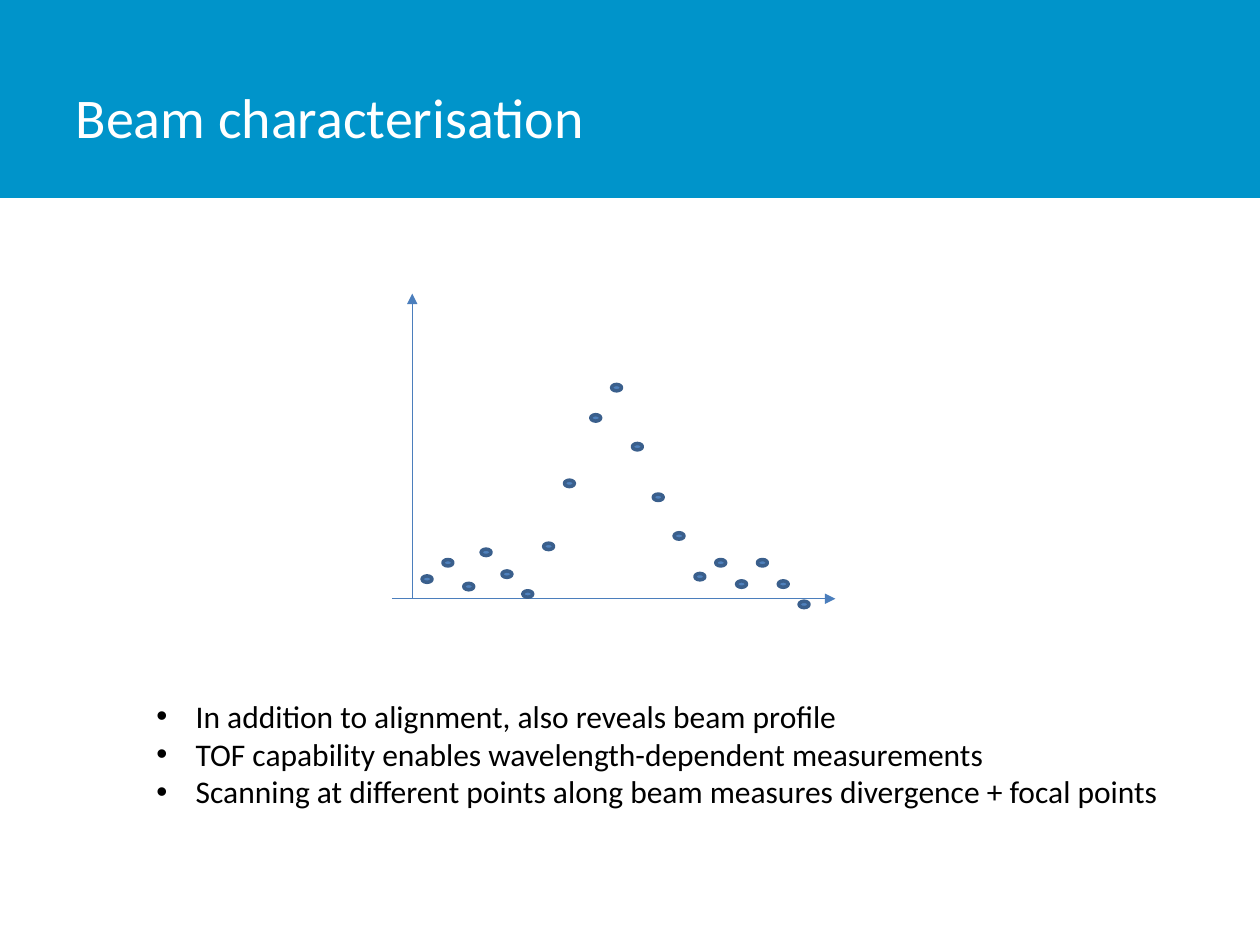
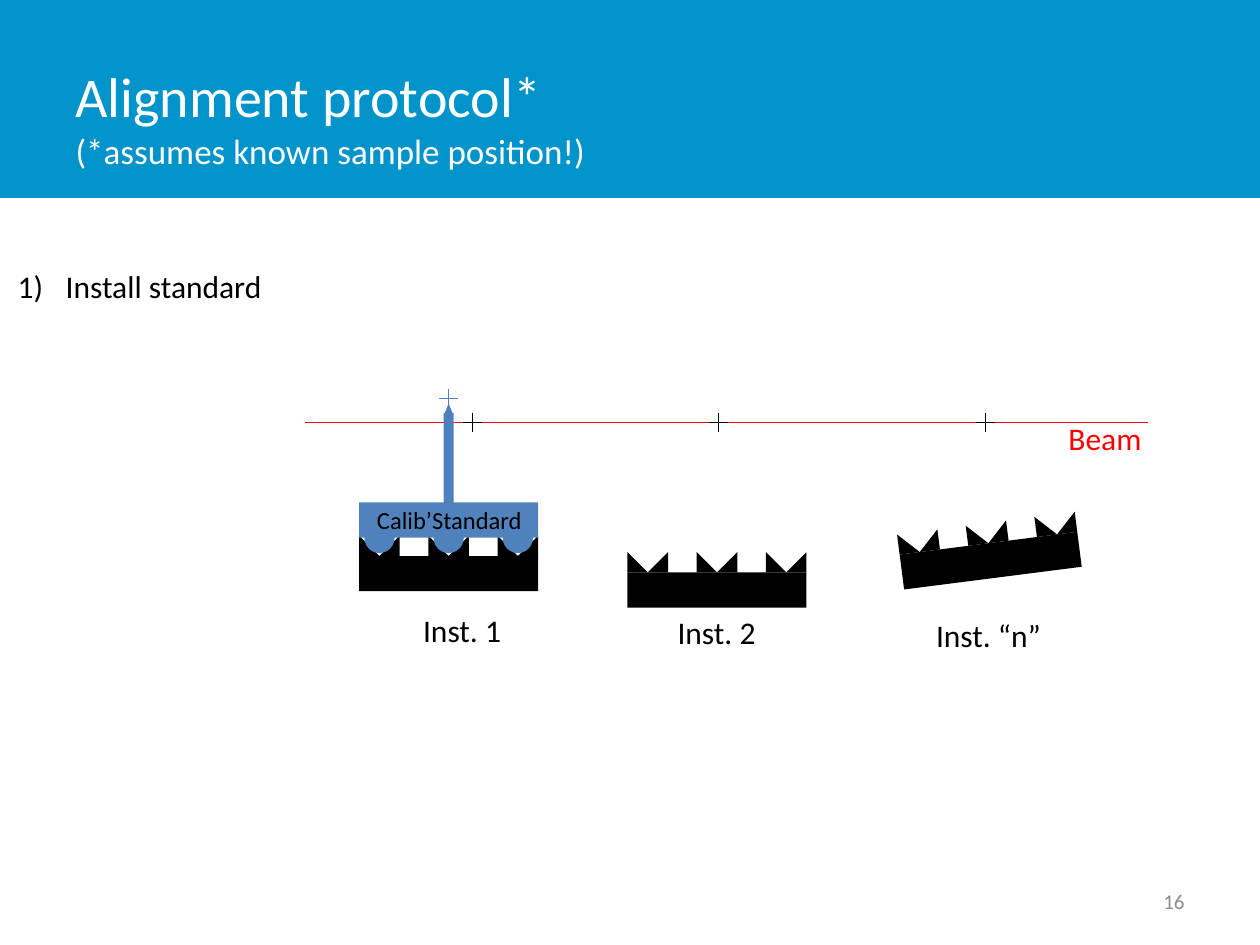
from lxml.etree import SubElement
from pptx import Presentation
from pptx.dml.color import RGBColor
from pptx.enum.shapes import MSO_CONNECTOR, MSO_SHAPE
from pptx.enum.text import MSO_ANCHOR, MSO_AUTO_SIZE, PP_ALIGN
from pptx.oxml.ns import qn
from pptx.util import Cm, Pt

FONT = "Calibri"
BAND, BLUE, STANDARD_BLUE = "0094CA", "4F81BD", "5182BB"
AXIS, DOT_EDGE = "4B7EBC", "3A5F8C"
BLACK, WHITE, RED, GREY = "000000", "FFFFFF", "FF0000", "8C8C8C"

PROFILE_TITLE = [("Beam characterisation", 32)]
PROFILE_POINTS = [
    "In addition to alignment, also reveals beam profile",
    "TOF capability enables wavelength-dependent measurements",
    "Scanning at different points along beam measures divergence + focal points",
]
AXES = [((8.31, 12.07), (8.31, 5.92)), ((7.9, 12.07), (16.84, 12.07))]
DOT_PITCH = 0.42
DOT_RUNS = [
    (8.51, [11.61, 11.28, 11.76]),
    (9.7, [11.07, 11.51, 11.91, 10.95, 9.68]),
    (11.91, [8.36, 7.75, 8.94, 9.96, 10.74, 11.56, 11.28, 11.71, 11.28, 11.71, 12.12]),
]

PROTOCOL_TITLE = [("Alignment protocol*", 32), ("(*assumes known sample position!)", 20)]
PROTOCOL_STEPS = ["Install standard"]
INSTRUMENTS = [(7.24, 10.8, 0), (12.65, 11.13, 0), (18.14, 10.54, -7.3)]
LABELS = [
    ("Inst. 1", (8.28, 12.19, 2.11, 1.02), BLACK),
    ("Inst. 2", (13.41, 12.24, 2.11, 1.02), BLACK),
    ("Inst. “n”", (18.62, 12.29, 2.64, 1.02), BLACK),
    ("Beam", (21.29, 8.33, 2.01, 1.02), RED),
]
BEAM_Y = 8.51
TARGETS = [9.52, 14.48, 19.86]
BAR_WIDTH, BAR_HEIGHT, TOOTH = 3.61, 0.71, 0.41
NOTCH_PITCH = (BAR_WIDTH - 2 * TOOTH) / 2
BALL = 0.61


def color(value):
    return RGBColor.from_string(value)


def box(*lengths):
    return [Cm(length) for length in lengths]


def place(shape, *lengths):
    shape.left, shape.top, shape.width, shape.height = box(*lengths)


def add_shape(shapes, kind, bounds, fill, edge=None):
    shape = shapes.add_shape(kind, *box(*bounds))
    shape.shadow.inherit = False
    shape.fill.solid()
    shape.fill.fore_color.rgb = color(fill)
    if edge:
        shape.line.color.rgb = color(edge)
        shape.line.width = Pt(2)
    else:
        shape.line.fill.background()
    return shape


def add_line(shapes, start, end, line_color, arrow=False):
    connector = shapes.add_connector(MSO_CONNECTOR.STRAIGHT, *box(*start, *end))
    connector.line.color.rgb = color(line_color)
    connector.line.width = Pt(0.75)
    if arrow:
        SubElement(connector.line._get_or_add_ln(), qn("a:tailEnd"), type="triangle")
    SubElement(connector._element.spPr, qn("a:effectLst"))


def format_runs(paragraph, size, text_color):
    for run in paragraph.runs:
        run.font.name = FONT
        run.font.size = Pt(size)
        run.font.color.rgb = color(text_color)


def add_text(shapes, text, bounds, size, text_color):
    text_box = shapes.add_textbox(*box(*bounds))
    frame = text_box.text_frame
    frame.word_wrap = False
    frame.text = text
    format_runs(frame.paragraphs[0], size, text_color)
    return frame


def fill_title(slide, lines):
    title = slide.shapes.title
    place(title, 1.27, 0.76, 19.84, 3.18)
    frame = title.text_frame
    frame.text = "\n".join(text for text, size in lines)
    frame.vertical_anchor = MSO_ANCHOR.MIDDLE
    frame.auto_size = MSO_AUTO_SIZE.NONE
    for paragraph, (text, size) in zip(frame.paragraphs, lines):
        paragraph.alignment = PP_ALIGN.LEFT
        format_runs(paragraph, size, WHITE)


def fill_list(slide, items, bounds, indent, bullet, **bullet_settings):
    body = slide.placeholders[1]
    place(body, *bounds)
    frame = body.text_frame
    frame.text = "\n".join(items)
    frame.word_wrap = False
    frame.auto_size = MSO_AUTO_SIZE.NONE
    for paragraph in frame.paragraphs:
        paragraph.space_before = Pt(0)
        properties = paragraph._p.get_or_add_pPr()
        properties.set("marL", str(Cm(indent)))
        properties.set("indent", str(-Cm(indent)))
        SubElement(properties, qn(bullet), **bullet_settings)
        format_runs(paragraph, 18, BLACK)


def add_slide(presentation, title_lines):
    slide = presentation.slides.add_slide(presentation.slide_layouts[1])
    fill_title(slide, title_lines)
    return slide


def add_master_band(presentation, slide):
    band = add_shape(slide.shapes, MSO_SHAPE.RECTANGLE, (0, 0, 25.4, 3.99), BAND)
    presentation.slide_master.shapes._spTree.insert(2, band._element)


def add_cross(shapes, x, y, line_color, arm=0.19):
    add_line(shapes, (x, y - arm), (x, y + arm), line_color)
    add_line(shapes, (x - arm, y), (x + arm, y), line_color)


def notch_centers(left):
    return [left + TOOTH + index * NOTCH_PITCH for index in range(3)]


def add_instrument(slide, left, top, rotation):
    group = slide.shapes.add_group_shape()
    bar = (left, top + TOOTH, BAR_WIDTH, BAR_HEIGHT)
    add_shape(group.shapes, MSO_SHAPE.RECTANGLE, bar, BLACK)
    for center in notch_centers(left):
        for tooth_left, flipped in ((center - TOOTH, "0"), (center, "1")):
            bounds = (tooth_left, top, TOOTH, TOOTH)
            tooth = add_shape(group.shapes, MSO_SHAPE.RIGHT_TRIANGLE, bounds, BLACK)
            tooth._element.spPr.xfrm.set("flipH", flipped)
    group.rotation = rotation


def add_standard(slide, left, top):
    shapes = slide.shapes.add_group_shape().shapes
    center = left + BAR_WIDTH / 2
    add_shape(shapes, MSO_SHAPE.RECTANGLE, (left, top, BAR_WIDTH, BAR_HEIGHT), STANDARD_BLUE)
    for notch in notch_centers(left):
        add_shape(shapes, MSO_SHAPE.OVAL, (notch - BALL / 2, top + 0.41, BALL, BALL), BLUE)
    add_shape(shapes, MSO_SHAPE.RECTANGLE, (center - 0.1, top - 1.8, 0.2, 2), BLUE)
    add_cross(shapes, center, top - 2.1, BLUE)
    add_shape(shapes, MSO_SHAPE.ISOSCELES_TRIANGLE, (center - 0.09, top - 2, 0.18, 0.23), BLUE)
    add_text(shapes, "Calib’Standard", (left + 0.11, top - 0.07, 3.48, 0.86), 14, BLACK)


def build_profile_slide(presentation):
    slide = add_slide(presentation, PROFILE_TITLE)
    add_master_band(presentation, slide)
    fill_list(slide, PROFILE_POINTS, (2.9, 13.92, 20.96, 2.57), 0.79, "a:buChar", char="•")
    axes = slide.shapes.add_group_shape().shapes
    for start, end in AXES:
        add_line(axes, start, end, AXIS, arrow=True)
    dots = slide.shapes.add_group_shape().shapes
    for left, tops in DOT_RUNS:
        for index, top in enumerate(tops):
            bounds = (left + index * DOT_PITCH, top, 0.2, 0.13)
            add_shape(dots, MSO_SHAPE.OVAL, bounds, BLUE, DOT_EDGE)


def build_protocol_slide(presentation):
    slide = add_slide(presentation, PROTOCOL_TITLE)
    fill_list(slide, PROTOCOL_STEPS, (0.1, 5.26, 5.46, 1.02), 0.97,
              "a:buAutoNum", type="arabicParenR")
    number = add_text(slide.shapes, "16", (18.21, 17.65, 5.92, 1.02), 12, GREY)
    number.word_wrap = True
    number.vertical_anchor = MSO_ANCHOR.MIDDLE
    number.paragraphs[0].alignment = PP_ALIGN.RIGHT
    for left, top, rotation in INSTRUMENTS:
        add_instrument(slide, left, top, rotation)
    add_line(slide.shapes, (6.15, BEAM_Y), (23.14, BEAM_Y), RED)
    for text, bounds, text_color in LABELS:
        add_text(slide.shapes, text, bounds, 18, text_color)
    for x in TARGETS:
        add_cross(slide.shapes.add_group_shape().shapes, x, BEAM_Y, BLACK)
    add_standard(slide, INSTRUMENTS[0][0], 10.13)


def main():
    presentation = Presentation()
    presentation.slide_width, presentation.slide_height = box(25.4, 19.05)
    build_profile_slide(presentation)
    build_protocol_slide(presentation)
    presentation.save("out.pptx")


if __name__ == "__main__":
    main()
